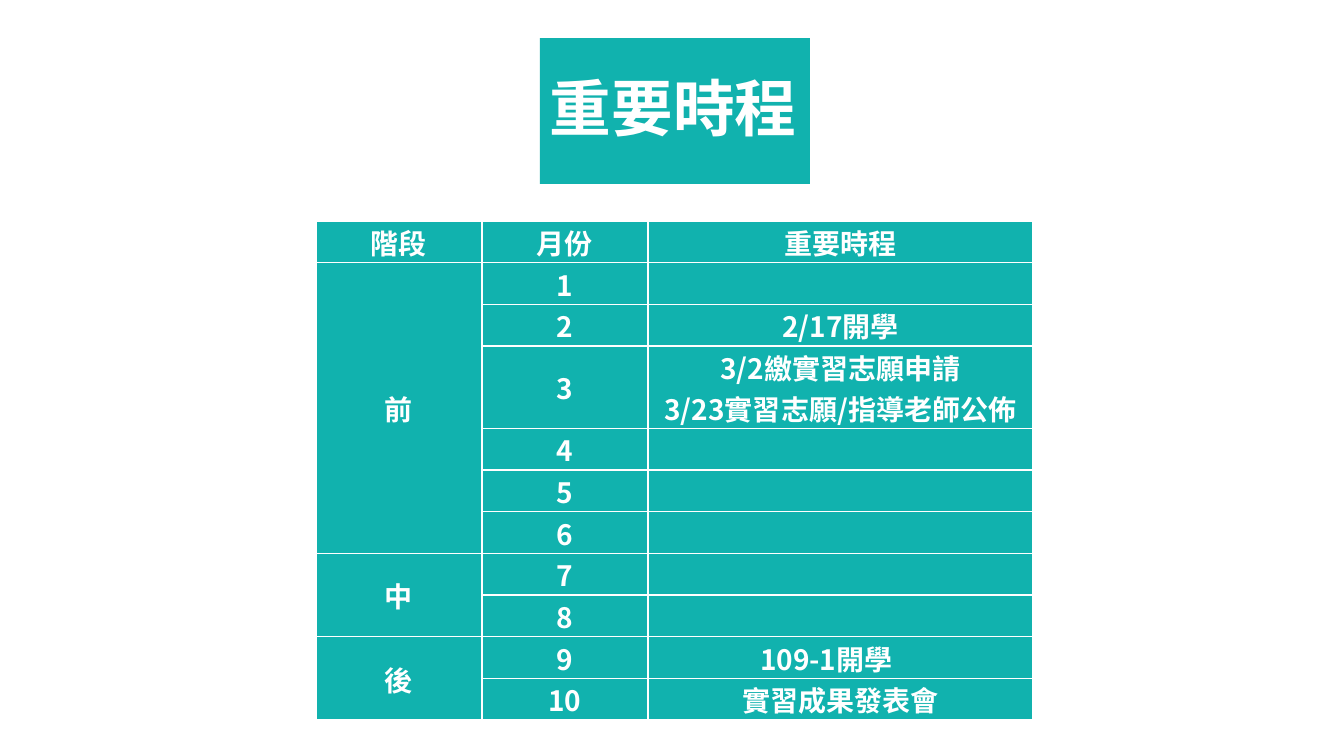
from dataclasses import dataclass

from lxml.etree import SubElement
from pptx import Presentation
from pptx.dml.color import RGBColor
from pptx.enum.shapes import MSO_SHAPE as Shape
from pptx.enum.text import MSO_ANCHOR as Anchor, PP_ALIGN as Align
from pptx.oxml import parse_xml
from pptx.oxml.ns import nsdecls, qn
from pptx.util import Pt

PX = 914400 / 100.8


@dataclass(frozen=True)
class Theme:
    teal: str = "11B2AE"
    white: str = "FFFFFF"
    font: str = "Noto Sans CJK SC"
    title_size: int = 44
    table_size: int = 20
    border_width: int = 1


THEME = Theme()
TITLE_BOX = (540, 38, 270, 146)
TABLE_BOX = (316, 221, 717, 492)
COLUMN_WIDTHS = (166, 166, 385)
LINE_HEIGHT = 41

HEADINGS = ("階段", "月份", "重要時程")
STAGES = (("前", 1, 6), ("中", 7, 8), ("後", 9, 10))
EVENTS = {
    2: "2/17開學",
    3: "3/2繳實習志願申請\n3/23實習志願/指導老師公佈",
    9: "109-1開學　",
    10: "實習成果發表會",
}


def px(length):
    return round(length * PX)


def apply(target, values):
    for name, value in values.items():
        setattr(target, name, value)


def fill_solid(fill, color):
    fill.solid()
    fill.fore_color.rgb = RGBColor.from_string(color)


def write(text_frame, text, size, **paragraph_format):
    """Fill the frame with bold white text, one paragraph a line."""
    text_frame.text = text
    for paragraph in text_frame.paragraphs:
        apply(paragraph, paragraph_format)
        for run in paragraph.runs:
            apply(run.font, {"name": THEME.font, "size": Pt(size), "bold": True})
            run.font.color.rgb = RGBColor.from_string(THEME.white)
            east_asian = SubElement(run.font._element, qn("a:ea"))
            east_asian.set("typeface", THEME.font)


def add_borders(cell):
    properties = cell._tc.get_or_add_tcPr()
    for index, side in enumerate(("lnL", "lnR", "lnT", "lnB")):
        properties.insert(index, parse_xml(
            f'<a:{side} {nsdecls("a")} w="{Pt(THEME.border_width)}"><a:solidFill>'
            f'<a:srgbClr val="{THEME.white}"/></a:solidFill></a:{side}>'))


def add_title(slide, box):
    shape = slide.shapes.add_shape(Shape.RECTANGLE, *map(px, box))
    shape.shadow.inherit = False
    shape.line.fill.background()
    fill_solid(shape.fill, THEME.teal)
    apply(shape.text_frame, {"word_wrap": True, "vertical_anchor": Anchor.MIDDLE})
    write(shape.text_frame, "重要時程", THEME.title_size,
          alignment=Align.LEFT, line_spacing=0.9)


def add_schedule(slide, box):
    last_month = STAGES[-1][2]
    table = slide.shapes.add_table(
        last_month + 1, len(HEADINGS), *map(px, box)).table
    apply(table, {"first_row": False, "horz_banding": False})
    for column, width in zip(table.columns, COLUMN_WIDTHS):
        column.width = px(width)

    rows = [HEADINGS]
    for stage, first, last in STAGES:
        for month in range(first, last + 1):
            rows.append((stage if month == first else "", str(month),
                         EVENTS.get(month, "")))
        table.cell(first, 0).merge(table.cell(last, 0))

    for row, texts in zip(table.rows, rows):
        line_count = max(text.count("\n") + 1 for text in texts)
        row.height = px(LINE_HEIGHT * line_count)
        for cell, text in zip(row.cells, texts):
            apply(cell, {"margin_left": px(1), "margin_right": px(1),
                         "margin_top": px(1), "margin_bottom": 0,
                         "vertical_anchor": Anchor.MIDDLE})
            fill_solid(cell.fill, THEME.teal)
            add_borders(cell)
            if text:
                write(cell.text_frame, text, THEME.table_size,
                      alignment=Align.CENTER)


def main():
    presentation = Presentation()
    apply(presentation, {"slide_width": px(1344), "slide_height": px(756)})
    slide = presentation.slides.add_slide(presentation.slide_layouts[6])
    add_title(slide, TITLE_BOX)
    add_schedule(slide, TABLE_BOX)
    presentation.save("out.pptx")


if __name__ == "__main__":
    main()
